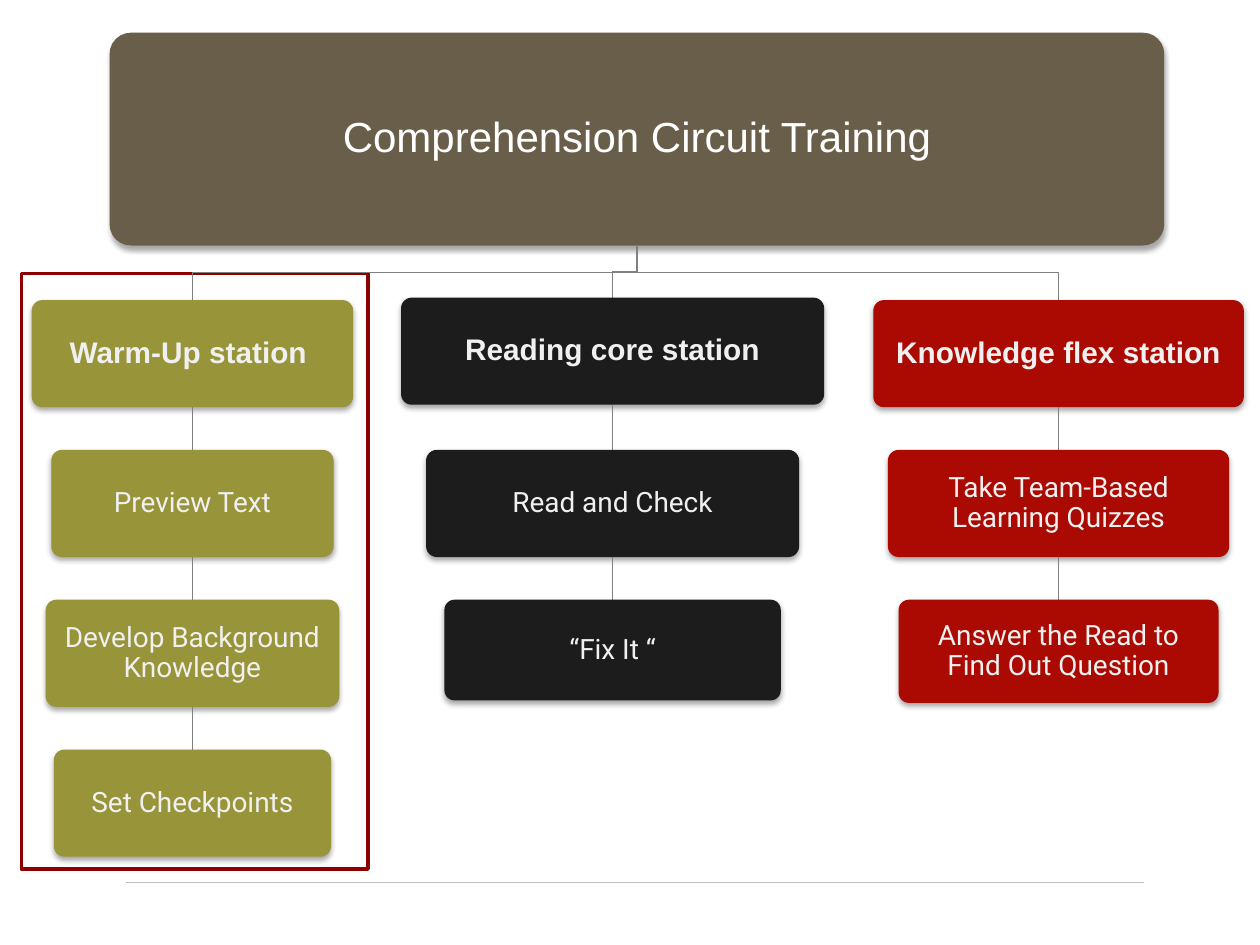
from lxml import etree
from pptx import Presentation
from pptx.dml.color import RGBColor
from pptx.enum import shapes as shp, text
from pptx.oxml import parse_xml
from pptx.oxml.ns import nsdecls, qn
from pptx.util import Cm, Pt

TITLE = "Comprehension Circuit Training"
ROOT = (2.21, 0.66, 21.26, 4.29)
FRAME = (0.43, 5.51, 6.99, 12.01)
ROW_TOP, ROW_STEP = 6.05, 3.02
GREY = "808080"

# Each station: colour, centre, lift of the heading, then (label, width, height)
STATIONS = [
    ("979439", 3.88, 0, [
        ("Warm-Up station ", 6.48, 2.16),
        ("Preview Text", 5.69, 2.16),
        ("Develop Background Knowledge", 5.92, 2.16),
        ("Set Checkpoints", 5.59, 2.16)]),
    ("1C1C1C", 12.35, 0.05, [
        ("Reading core station", 8.53, 2.16),
        ("Read and Check", 7.52, 2.16),
        ("“Fix It “", 6.78, 2.03)]),
    ("AA0A01", 21.34, 0, [
        ("Knowledge flex station", 7.47, 2.16),
        ("Take Team-Based Learning Quizzes", 6.88, 2.16),
        ("Answer the Read to Find Out Question", 6.45, 2.08)]),
]


def rgb(colour):
    return RGBColor.from_string(colour)


def style_line(line, colour, width):
    line.color.rgb = rgb(colour)
    line.width = Pt(width)


def write(shape, words, size, font, colour, bold=False, inset=0.24):
    frame = shape.text_frame
    frame.text = words
    frame.word_wrap = True
    frame.auto_size = text.MSO_AUTO_SIZE.NONE
    frame.vertical_anchor = text.MSO_ANCHOR.MIDDLE
    frame.margin_left = frame.margin_right = Cm(inset)
    frame.margin_top = frame.margin_bottom = Cm(inset)
    paragraph = frame.paragraphs[0]
    paragraph.alignment = text.PP_ALIGN.CENTER
    paragraph.line_spacing = 0.9
    paragraph.font.size = Pt(size)
    paragraph.font.name = font
    paragraph.font.bold = bold
    paragraph.font.color.rgb = rgb(colour)


def add_box(slide, place, colour):
    """Add a rounded box with a soft shadow below it."""
    box = slide.shapes.add_shape(
        shp.MSO_SHAPE.ROUNDED_RECTANGLE, *map(Cm, place))
    box.adjustments[0] = 0.1
    box.fill.solid()
    box.fill.fore_color.rgb = rgb(colour)
    box.line.fill.background()
    box._element.spPr.append(parse_xml(
        f'<a:effectLst {nsdecls("a")}>'
        '<a:outerShdw blurRad="40000" dist="23000" dir="5400000" rotWithShape="0">'
        '<a:srgbClr val="000000"><a:alpha val="35000"/></a:srgbClr>'
        '</a:outerShdw></a:effectLst>'))
    return box


def add_straight(slide, start, end, colour, width):
    line = slide.shapes.add_connector(
        shp.MSO_CONNECTOR.STRAIGHT, *map(Cm, start + end))
    style_line(line.line, colour, width)
    etree.SubElement(line._element.spPr, qn("a:effectLst"))


def add_elbow(slide, start, end):
    """Draw a branch that turns halfway down."""
    middle = (start[1] + end[1]) / 2
    points = [start, (start[0], middle), (end[0], middle), end]
    first, *rest = [(Cm(x), Cm(y)) for x, y in points]
    builder = slide.shapes.build_freeform(*first)
    builder.add_line_segments(rest, close=False)
    branch = builder.convert_to_shape()
    branch.fill.background()
    branch.shadow.inherit = False
    style_line(branch.line, GREY, 0.75)


def add_station(slide, colour, centre, lift, steps):
    root_foot = (ROOT[0] + ROOT[2] / 2, ROOT[1] + ROOT[3])
    foot = None
    for row, (label, width, height) in enumerate(steps):
        heading = row == 0
        top = ROW_TOP + row * ROW_STEP - (lift if heading else 0)
        if heading:
            add_elbow(slide, root_foot, (centre, top))
        else:
            add_straight(slide, (centre, foot), (centre, top), GREY, 0.75)
        box = add_box(slide, (centre - width / 2, top, width, height), colour)
        size, font = (17, "Arial") if heading else (16, "Roboto")
        write(box, label, size, font, "F0F0F0", heading)
        foot = top + height


def main():
    deck = Presentation()
    deck.slide_width, deck.slide_height = Cm(25.4), Cm(19.05)
    slide = deck.slides.add_slide(deck.slide_layouts[5])

    add_straight(slide, (2.54, 17.78), (23.06, 17.78), "BFBFBF", 0.5)
    frame = slide.shapes.add_shape(shp.MSO_SHAPE.RECTANGLE, *map(Cm, FRAME))
    frame.fill.solid()
    frame.fill.fore_color.rgb = rgb("FFFFFF")
    frame.shadow.inherit = False
    style_line(frame.line, "8E0000", 2)

    root = add_box(slide, ROOT, "695E4A")
    title = slide.shapes.title
    title.left, title.top, title.width, title.height = map(Cm, ROOT)
    write(title, TITLE, 24, "Arial", "FFFFFF")
    root._element.addnext(title._element)

    for station in STATIONS:
        add_station(slide, *station)
    deck.save("out.pptx")


if __name__ == "__main__":
    main()
